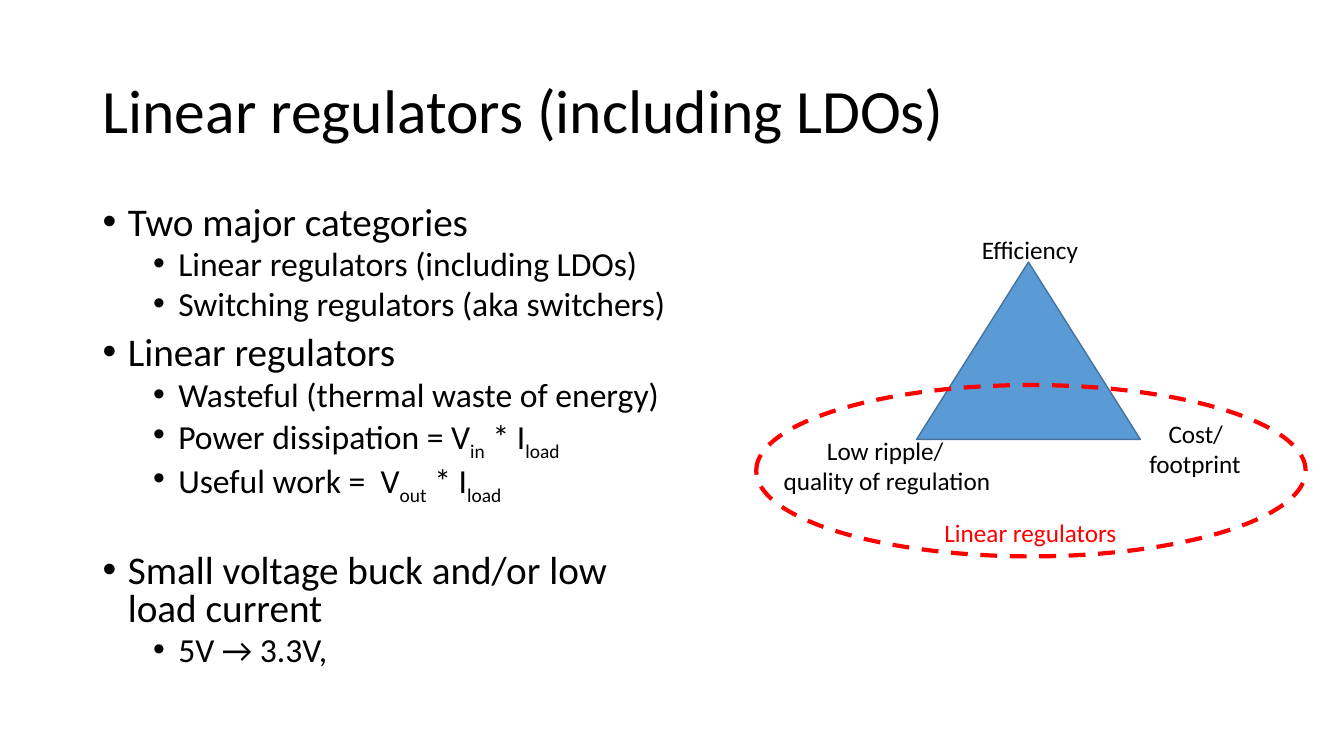
from pptx import Presentation
from pptx.dml.color import RGBColor
from pptx.enum.dml import MSO_LINE
from pptx.enum.shapes import MSO_SHAPE as Shape
from pptx.enum.text import MSO_ANCHOR as Anchor, PP_ALIGN as Align
from pptx.oxml.ns import qn
from pptx.util import Inches, Pt
from lxml.etree import SubElement

FONT = "Calibri"
BLACK, RED = "000000", "FF0000"
BLUE, DARK_BLUE = "5B9BD5", "43739E"

# Level, text (subscripts between ~ marks), space before in points
POINTS = [
    (0, "Two major categories", 10),
    (1, "Linear regulators (including LDOs)", 5),
    (1, "Switching regulators (aka switchers)", 5),
    (0, "Linear regulators", 10),
    (1, "Wasteful (thermal waste of energy)", 5),
    (1, "Power dissipation = V~in~ * I~load~", 5),
    (1, "Useful work =  V~out~ * I~load~", 5),
    (0, "Small voltage buck and/or low load current", 38.4),
    (1, "5V → 3.3V,", 5),
]


def color(value):
    return RGBColor.from_string(value)


def write_text(paragraph, text, size=18, ink=BLACK, align=Align.LEFT,
               line_spacing=1.0, space_before=0):
    paragraph.alignment = align
    paragraph.line_spacing = line_spacing
    paragraph.space_before = Pt(space_before)
    for index, part in enumerate(text.split("~")):
        if not part:
            continue
        run = paragraph.add_run()
        run.text = part
        run.font.name = FONT
        run.font.size = Pt(size)
        run.font.color.rgb = color(ink)
        if index % 2:
            run.font._element.set("baseline", "-25000")


def add_bullet(paragraph, level):
    paragraph.level = level
    properties = paragraph._p.get_or_add_pPr()
    properties.set("marL", str(Inches(0.25 + 0.5 * level)))
    properties.set("indent", str(Inches(-0.25)))
    SubElement(properties, qn("a:buFont")).set("typeface", "Arial")
    SubElement(properties, qn("a:buChar")).set("char", "•")


def add_frame(slide, box, wrap=True, anchor=Anchor.TOP):
    frame = slide.shapes.add_textbox(*map(Inches, box)).text_frame
    frame.word_wrap = wrap
    frame.vertical_anchor = anchor
    return frame


def add_label(slide, box, lines, ink=BLACK):
    frame = add_frame(slide, box, wrap=False)
    for index, (text, align) in enumerate(lines):
        paragraph = frame.add_paragraph() if index else frame.paragraphs[0]
        write_text(paragraph, text, ink=ink, align=align)


def add_bullet_list(slide, box, points):
    frame = add_frame(slide, box)
    for index, (level, text, space) in enumerate(points):
        paragraph = frame.add_paragraph() if index else frame.paragraphs[0]
        write_text(paragraph, text, size=28 - 4 * level,
                   line_spacing=0.8, space_before=space)
        add_bullet(paragraph, level)


def add_outline_shape(slide, kind, box, line, width, fill=None, dash=None):
    shape = slide.shapes.add_shape(kind, *map(Inches, box))
    shape.shadow.inherit = False
    if fill:
        shape.fill.solid()
        shape.fill.fore_color.rgb = color(fill)
    else:
        shape.fill.background()
    shape.line.color.rgb = color(line)
    shape.line.width = Pt(width)
    if dash:
        shape.line.dash_style = dash


def main():
    presentation = Presentation()
    presentation.slide_width = Inches(13.33)
    presentation.slide_height = Inches(7.5)
    slide = presentation.slides.add_slide(presentation.slide_layouts[6])

    # Title and bullets
    title = add_frame(slide, (0.92, 0.4, 11.5, 1.45), anchor=Anchor.MIDDLE)
    write_text(title.paragraphs[0], "Linear regulators (including LDOs)",
               size=44, line_spacing=0.9)
    add_bullet_list(slide, (0.92, 2, 5.87, 4.76), POINTS)

    # Trade-off triangle with a label at each corner
    add_outline_shape(slide, Shape.ISOSCELES_TRIANGLE, (9.09, 2.6, 2.22, 1.76),
                      DARK_BLUE, 1, fill=BLUE)
    add_label(slide, (9.64, 2.28, 1.17, 0.4), [("Efficiency", Align.LEFT)])
    add_label(slide, (7.64, 4.27, 2.28, 0.71),
              [("Low ripple/", Align.CENTER),
               ("quality of regulation", Align.RIGHT)])
    add_label(slide, (11.3, 4.1, 1.12, 0.71),
              [("Cost/", Align.CENTER), ("footprint", Align.LEFT)])

    # Region covered by linear regulators
    add_outline_shape(slide, Shape.OVAL, (7.5, 3.82, 5.45, 1.7), RED, 3,
                      dash=MSO_LINE.DASH)
    add_label(slide, (9.22, 5.08, 2, 0.4),
              [("Linear regulators", Align.CENTER)], ink=RED)

    presentation.save("out.pptx")


if __name__ == "__main__":
    main()
